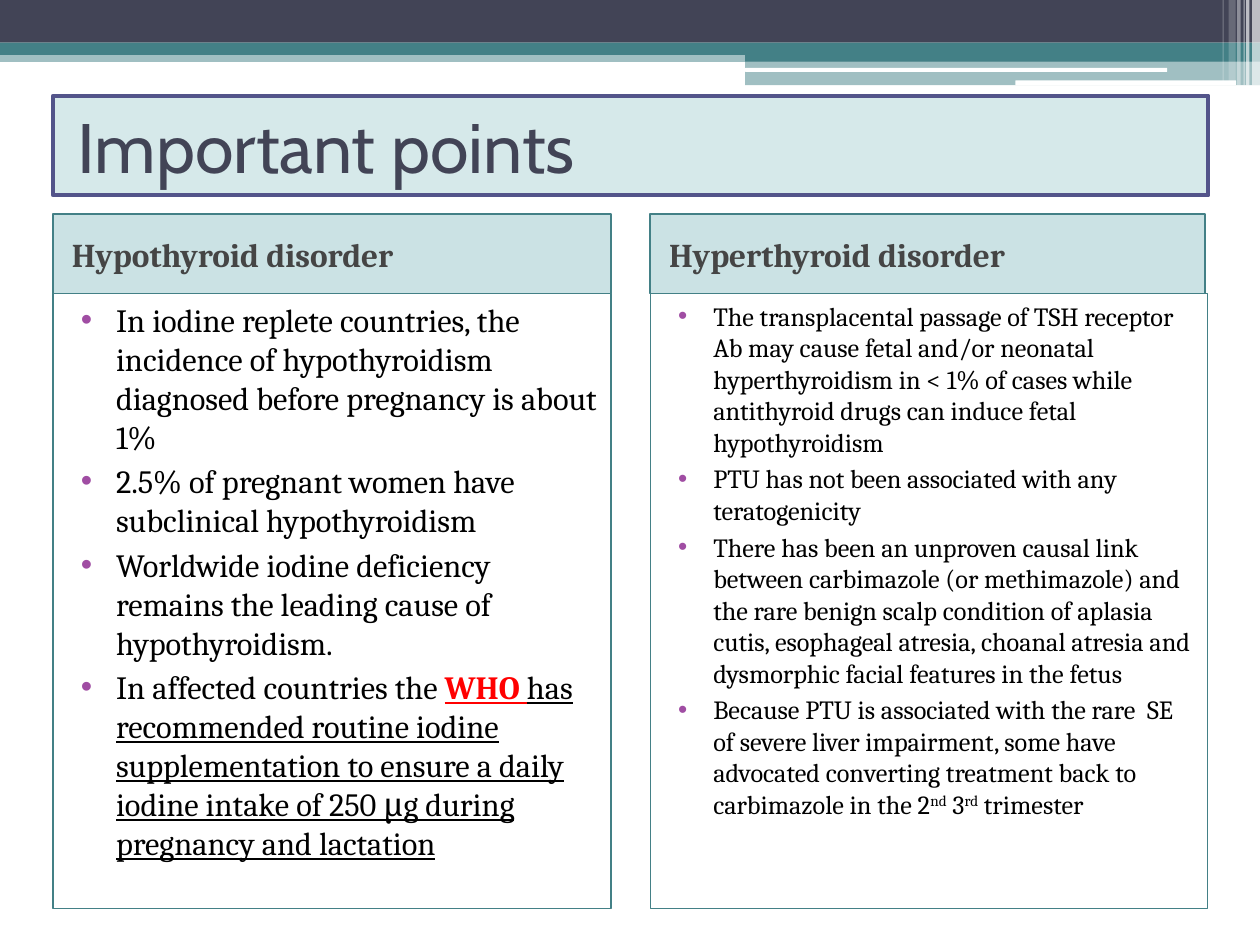
"""Build a two-column slide comparing hypothyroid and hyperthyroid disorders."""
from lxml.etree import SubElement
from pptx import Presentation
from pptx.dml.color import RGBColor
from pptx.enum.shapes import MSO_SHAPE
from pptx.enum.text import MSO_ANCHOR, PP_ALIGN
from pptx.oxml.ns import qn
from pptx.util import Cm, Pt

WHITE = RGBColor(0xFF, 0xFF, 0xFF)
BLACK = RGBColor(0x00, 0x00, 0x00)
RED = RGBColor(0xFF, 0x00, 0x00)
NAVY = RGBColor(0x42, 0x44, 0x56)
TEAL = RGBColor(0x43, 0x80, 0x86)
HEADING_TEAL = RGBColor(0x32, 0x8E, 0x97)
PALE_TEAL = RGBColor(0xD6, 0xE9, 0xEA)
INDIGO = RGBColor(0x53, 0x54, 0x8A)
GREY = RGBColor(0x45, 0x45, 0x45)
PURPLE = RGBColor(0xA0, 0x4D, 0xA3)

UNDERLINED = {"underline": True}
ALERT = {"underline": True, "bold": True, "color": RED}
RAISED = {"raised": True}

BANDS = [
    (0, 1.02, 25.4, 0.23, TEAL, 50),
    (0, 0, 25.4, 0.86, NAVY, 100),
    (0, 0.86, 25.4, 0.25, TEAL, 100),
    (15.02, 0.98, 10.38, 0.26, TEAL, 100),
    (15.02, 1.23, 10.38, 0.49, TEAL, 50),
]
PILLS = [(15.02, 1.37, 8.51, 0.08), (20.47, 1.62, 4.45, 0.1)]
STRIPES = [
    (25.24, 0.16, 1.73, 65),
    (25.12, 0.07, 1.73, 65),
    (25.07, 0.02, 1.73, 60),
    (24.94, 0.07, 1.73, 40),
    (24.77, 0.14, 1.63, 20),
    (24.65, 0.02, 1.63, 30),
]
HYPOTHYROID = [
    [("In iodine replete countries, the incidence of hypothyroidism "
      "diagnosed before pregnancy is about 1%", {})],
    [("2.5% of pregnant women have subclinical hypothyroidism", {})],
    [("Worldwide iodine deficiency remains the leading cause of "
      "hypothyroidism.", {})],
    [("In affected countries the ", {}),
     ("WHO ", ALERT),
     ("has recommended routine iodine supplementation to ensure a daily "
      "iodine intake of 250 μg during pregnancy and lactation", UNDERLINED)],
]
HYPERTHYROID = [
    [("The transplacental passage of TSH receptor Ab may cause fetal and/or "
      "neonatal hyperthyroidism in < 1% of cases while antithyroid drugs can "
      "induce fetal hypothyroidism", {})],
    [("PTU has not been associated with any teratogenicity", {})],
    [("There has been an unproven causal link between carbimazole (or "
      "methimazole) and the rare benign scalp condition of aplasia cutis, "
      "esophageal atresia, choanal atresia and dysmorphic facial features in "
      "the fetus", {})],
    [("Because PTU is associated with the rare  SE of severe liver "
      "impairment, some have advocated converting treatment back to "
      "carbimazole in the 2", {}),
     ("nd", RAISED), (" 3", {}), ("rd", RAISED), (" trimester", {})],
]
COLUMNS = [
    (1.07, 11.25, 11.25, "Hypothyroid disorder", HYPOTHYROID, 18.5, 22.3),
    (13.11, 11.18, 11.23, "Hyperthyroid disorder", HYPERTHYROID, 15, 18),
]


class SlideBuilder:
    """Hold the slide's style and draw each kind of element on it."""

    title_font = "Cabin"
    body_font = "Cambria"

    def __init__(self, slide):
        self.slide = slide

    def block(self, left, top, width, height, fill=None, opacity=100,
              line=None, line_width=1, preset=MSO_SHAPE.RECTANGLE):
        """Draw a filled or outlined block."""
        block = self.slide.shapes.add_shape(
            preset, Cm(left), Cm(top), Cm(width), Cm(height))
        block.shadow.inherit = False
        if fill is None:
            block.fill.background()
        else:
            block.fill.solid()
            block.fill.fore_color.rgb = fill
            if opacity < 100:
                color = block.fill._xPr.find(qn("a:solidFill"))[0]
                SubElement(color, qn("a:alpha"), val=str(opacity * 1000))
        if line is None:
            block.line.fill.background()
        else:
            block.line.color.rgb = line
            block.line.width = Pt(line_width)
        return block

    def paragraph(self, frame, first, margin, indent=0, before=0):
        """Return a left-aligned paragraph with its indents set."""
        paragraph = frame.paragraphs[0] if first else frame.add_paragraph()
        paragraph.alignment = PP_ALIGN.LEFT
        paragraph.space_before = Pt(before)
        properties = paragraph._p.get_or_add_pPr()
        properties.set("marL", str(Cm(margin)))
        properties.set("indent", str(Cm(indent)))
        return paragraph

    def run(self, paragraph, text, size, color=BLACK, font=body_font,
            bold=False, underline=False, raised=False):
        """Add one styled run."""
        run = paragraph.add_run()
        run.text = text
        run.font.name = font
        run.font.size = Pt(size)
        run.font.color.rgb = color
        run.font.bold = bold
        run.font.underline = underline
        if raised:
            run.font._element.set("baseline", "30000")

    def title(self, text):
        """Draw the framed title."""
        banner = self.block(1.07, 1.93, 23.29, 2.01, PALE_TEAL,
                            line=INDIGO, line_width=2.25)
        banner.text_frame.vertical_anchor = MSO_ANCHOR.MIDDLE
        paragraph = self.paragraph(banner.text_frame, True, 0.25)
        self.run(paragraph, text, 40, NAVY, self.title_font)

    def heading(self, left, width, text):
        """Draw a column heading."""
        header = self.block(left, 4.32, width, 1.6, HEADING_TEAL, 25, TEAL)
        header.text_frame.vertical_anchor = MSO_ANCHOR.MIDDLE
        paragraph = self.paragraph(header.text_frame, True, 0.13, before=3)
        self.run(paragraph, text, 19, GREY, bold=True)

    def bullets(self, left, width, points, size, line_height):
        """Draw a framed bullet list."""
        panel = self.block(left, 5.92, width, 12.4, line=TEAL, line_width=0.75)
        panel.text_frame.vertical_anchor = MSO_ANCHOR.TOP
        for number, point in enumerate(points):
            paragraph = self.paragraph(panel.text_frame, number == 0,
                                       1.02, -0.71, 3)
            paragraph.line_spacing = Pt(line_height)
            properties = paragraph._p.get_or_add_pPr()
            bullet_color = SubElement(properties, qn("a:buClr"))
            SubElement(bullet_color, qn("a:srgbClr"), val=str(PURPLE))
            SubElement(properties, qn("a:buFont"), typeface="Arial")
            SubElement(properties, qn("a:buChar"), char="•")
            for text, style in point:
                self.run(paragraph, text, size, **style)


def main():
    """Assemble and save the slide."""
    deck = Presentation()
    deck.slide_width, deck.slide_height = Cm(25.4), Cm(19.05)
    builder = SlideBuilder(deck.slides.add_slide(deck.slide_layouts[6]))
    for band in BANDS:
        builder.block(*band)
    for pill in PILLS:
        builder.block(*pill, WHITE, preset=MSO_SHAPE.ROUNDED_RECTANGLE)
    for left, width, height, opacity in STRIPES:
        builder.block(left, 0, width, height, WHITE, opacity)
    builder.title("Important points")
    for left, head_width, list_width, heading, points, size, pitch in COLUMNS:
        builder.heading(left, head_width, heading)
        builder.bullets(left, list_width, points, size, pitch)
    deck.save("out.pptx")


if __name__ == "__main__":
    main()
